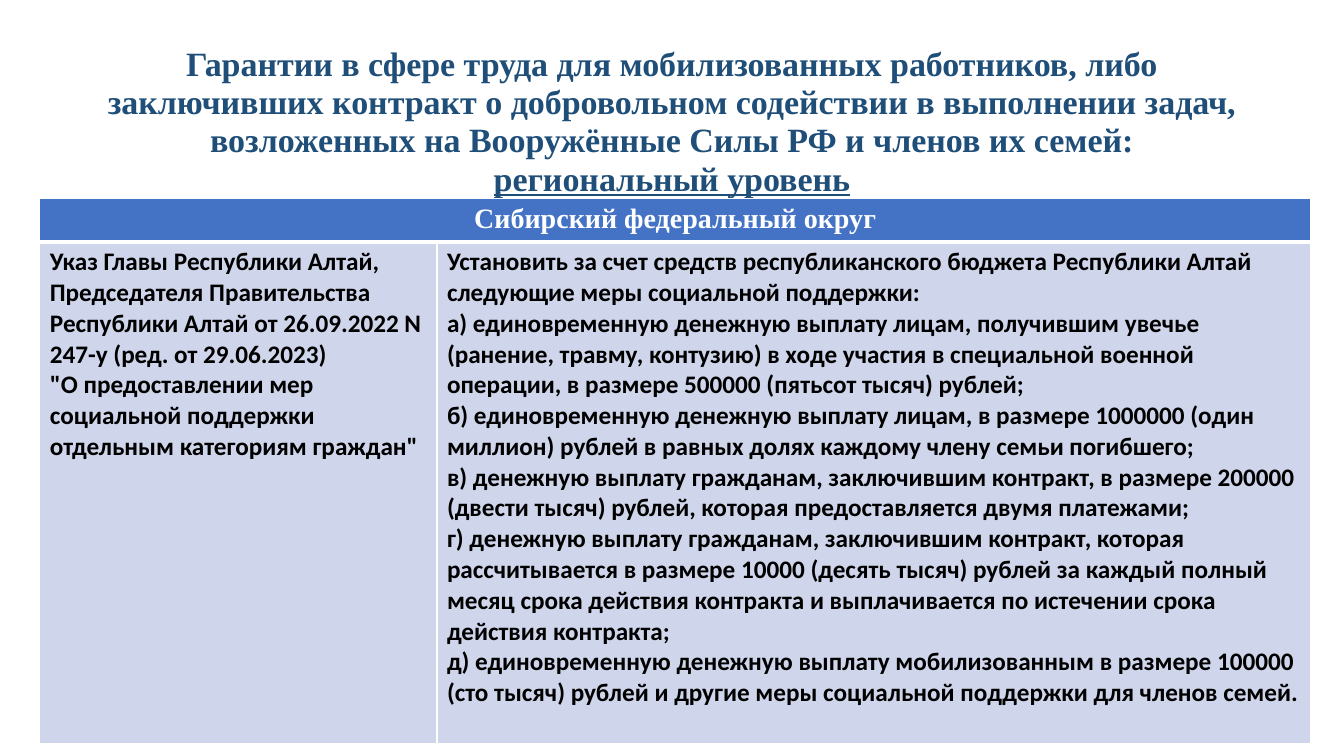
import pptx
import pptx.util
import pptx.dml.color
import pptx.enum.text
import pptx.oxml

Pt = pptx.util.Pt
CENTER = pptx.enum.text.PP_ALIGN.CENTER
LEFT = pptx.enum.text.PP_ALIGN.LEFT
TOP = pptx.enum.text.MSO_ANCHOR.TOP
NAMESPACE = "http://schemas.openxmlformats.org/drawingml/2006/main"

TITLE = [
    ("Гарантии в сфере труда для мобилизованных работников, либо заключивших контракт "
     "о добровольном содействии в выполнении задач, возложенных на Вооружённые Силы РФ "
     "и членов их семей: ", False),
    ("региональный уровень", True),
]
DISTRICT = "Сибирский федеральный округ"
DECREE = [
    "Указ Главы Республики Алтай, Председателя Правительства Республики Алтай "
    "от 26.09.2022 N 247-у (ред. от 29.06.2023)",
    "\"О предоставлении мер социальной поддержки отдельным категориям граждан\"",
]
MEASURES = [
    "Установить за счет средств республиканского бюджета Республики Алтай следующие "
    "меры социальной поддержки:",
    "а) единовременную денежную выплату лицам, получившим увечье (ранение, травму, "
    "контузию) в ходе участия в специальной военной операции, в размере 500000 "
    "(пятьсот тысяч) рублей;",
    "б) единовременную денежную выплату лицам, в размере 1000000 (один миллион) рублей "
    "в равных долях каждому члену семьи погибшего;",
    "в) денежную выплату гражданам, заключившим контракт, в размере 200000 (двести тысяч) "
    "рублей, которая предоставляется двумя платежами;",
    "г) денежную выплату гражданам, заключившим контракт, которая рассчитывается в размере "
    "10000 (десять тысяч) рублей за каждый полный месяц срока действия контракта и "
    "выплачивается по истечении срока действия контракта;",
    "д) единовременную денежную выплату мобилизованным в размере 100000 (сто тысяч) рублей "
    "и другие меры социальной поддержки для членов семей.",
]


def color(value):
    return pptx.dml.color.RGBColor.from_string(value)


class SlideBuilder:
    heading_font = "Times New Roman"
    body_font = "Calibri"
    title_color = "1F4E79"
    header_fill = "4472C4"
    body_fill = "CFD5EA"
    white = "FFFFFF"
    black = "000000"

    def __init__(self, slide):
        self.slide = slide

    def run(self, paragraph, text, font, size, text_color, underline=None):
        run = paragraph.add_run()
        run.text = text
        run.font.name = font
        run.font.size = Pt(size)
        run.font.bold = True
        run.font.underline = underline
        run.font.color.rgb = color(text_color)

    def title(self, parts, left, top, width, height):
        shape = self.slide.shapes.title
        shape.left, shape.top, shape.width, shape.height = map(Pt, (left, top, width, height))
        frame = shape.text_frame
        frame.word_wrap = True
        frame.auto_size = pptx.enum.text.MSO_AUTO_SIZE.NONE
        frame.vertical_anchor = TOP
        paragraph = frame.paragraphs[0]
        paragraph.alignment = CENTER
        paragraph.line_spacing = 0.94
        for text, underlined in parts:
            self.run(paragraph, text, self.heading_font, 24.3, self.title_color, underlined or None)

    def table(self, left, top, columns, rows):
        frame = self.slide.shapes.add_table(
            len(rows), len(columns), Pt(left), Pt(top), Pt(sum(columns)), Pt(sum(rows)))
        table = frame.table
        for column, width in zip(table.columns, columns):
            column.width = Pt(width)
        for row, height in zip(table.rows, rows):
            row.height = Pt(height)
        return table

    def borders(self, cell, widths):
        properties = cell._tc.get_or_add_tcPr()
        for index, (side, width) in enumerate(widths.items()):
            properties.insert(index, pptx.oxml.parse_xml(
                f'<a:{side} xmlns:a="{NAMESPACE}" w="{Pt(width)}"><a:solidFill>'
                f'<a:srgbClr val="{self.white}"/></a:solidFill></a:{side}>'))

    def cell(self, cell, texts, header=False):
        cell.fill.solid()
        cell.fill.fore_color.rgb = color(self.header_fill if header else self.body_fill)
        cell.vertical_anchor = TOP
        style = ((self.heading_font, 20, self.white) if header
                 else (self.body_font, 18, self.black))
        for index, text in enumerate(texts):
            frame = cell.text_frame
            paragraph = frame.add_paragraph() if index else frame.paragraphs[0]
            paragraph.alignment = CENTER if header else LEFT
            self.run(paragraph, text, *style)
        self.borders(cell, {"lnL": 1, "lnR": 1,
                            "lnT": 1 if header else 3, "lnB": 3 if header else 1})


def main():
    presentation = pptx.Presentation()
    presentation.slide_width = Pt(960)
    presentation.slide_height = Pt(540)
    builder = SlideBuilder(presentation.slides.add_slide(presentation.slide_layouts[5]))
    builder.title(TITLE, 66, 29, 828, 104.4)
    table = builder.table(28.4, 141.8, (283.7, 624.2), (31, 358.5))
    table.cell(0, 0).merge(table.cell(0, 1))
    builder.cell(table.cell(0, 0), [DISTRICT], header=True)
    builder.cell(table.cell(1, 0), DECREE)
    builder.cell(table.cell(1, 1), MEASURES)
    presentation.save("out.pptx")


if __name__ == "__main__":
    main()
